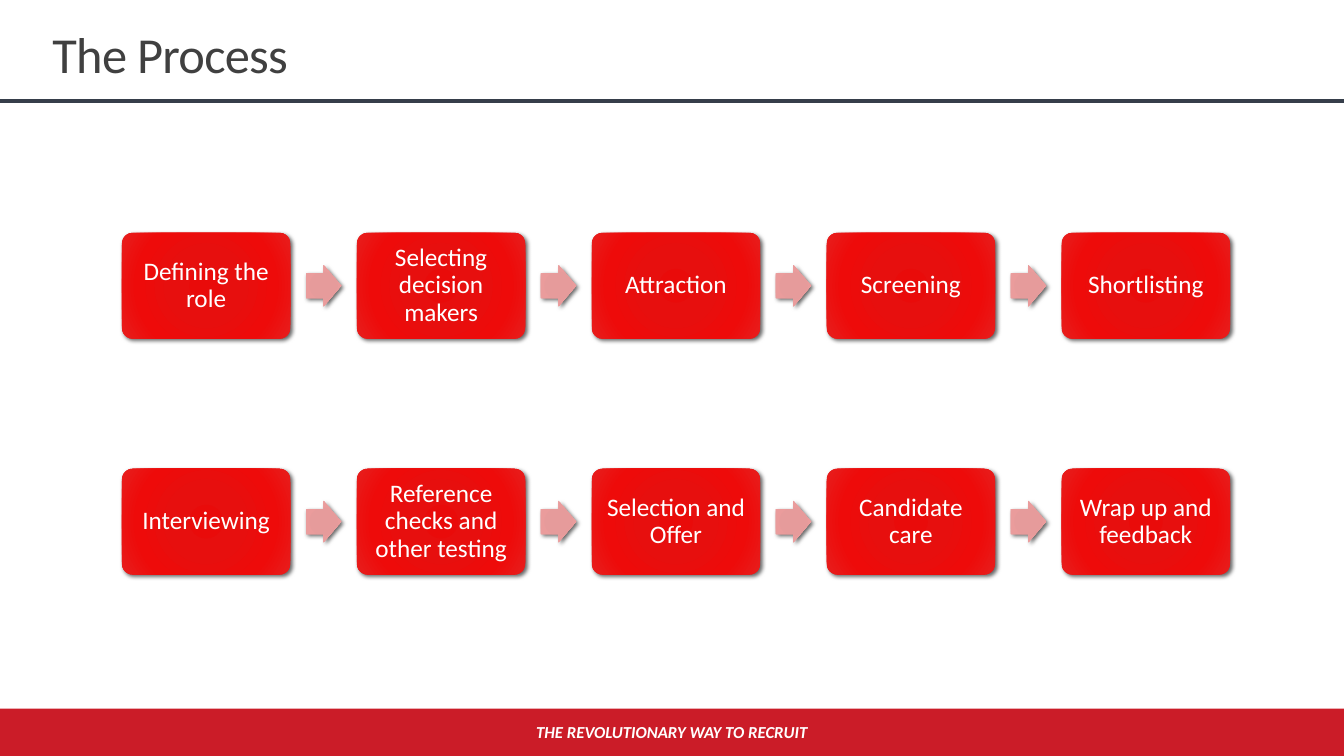
from dataclasses import dataclass

from lxml import etree
from pptx import Presentation
from pptx.dml.color import RGBColor
from pptx.enum.shapes import MSO_CONNECTOR, MSO_SHAPE
from pptx.enum.text import MSO_ANCHOR, PP_ALIGN
from pptx.oxml import parse_xml
from pptx.oxml.ns import nsdecls, qn
from pptx.util import Inches, Pt

RECT, ROUNDED, ARROW = MSO_SHAPE.RECTANGLE, MSO_SHAPE.ROUNDED_RECTANGLE, MSO_SHAPE.RIGHT_ARROW
STRAIGHT = MSO_CONNECTOR.STRAIGHT
LEFT, CENTER = PP_ALIGN.LEFT, PP_ALIGN.CENTER
MIDDLE, BOTTOM = MSO_ANCHOR.MIDDLE, MSO_ANCHOR.BOTTOM

W, H = 13.33, 7.5


@dataclass(frozen=True)
class Theme:
    font: str = "Calibri"
    title_size: int = 36
    step_size: int = 18
    footer_size: int = 12
    title: str = "404040"
    rule: str = "363E4A"
    footer: str = "CB1C28"
    white: str = "FFFFFF"
    stops: tuple = (0, 34, 70, 100)
    step: tuple = ("E90B0A", "E70F0E", "EE0B0A", "E71E1D")
    arrow: tuple = ("E59898", "E69B9B", "EA9C9C", "EFAAA9")


T = Theme()
ROWS = [
    ["Defining the role", "Selecting decision makers", "Attraction",
     "Screening", "Shortlisting"],
    ["Interviewing", "Reference checks and other testing",
     "Selection and Offer", "Candidate care", "Wrap up and feedback"],
]

# Process grid
GRID_X, GRID_Y = 1.21, 2.31
PITCH_X, PITCH_Y = 2.33, 2.34
STEP_W, STEP_H = 1.67, 1.05
ARROW_W, ARROW_H = 0.35, 0.41


def write(s, text, size, color, align=CENTER, anchor=MIDDLE, spacing=1.0,
          bold=False, italic=False, tracking=None):
    tf = s.text_frame
    tf.word_wrap = True
    tf.vertical_anchor = anchor
    p = tf.paragraphs[0]
    p.alignment, p.line_spacing = align, spacing
    r = p.add_run()
    r.text = text
    r.font.name, r.font.size = T.font, Pt(size)
    r.font.bold, r.font.italic = bold, italic
    r.font.color.rgb = RGBColor.from_string(color)
    if tracking is not None:
        r.font._element.set("spc", str(int(tracking * 100)))
    return tf


def add_shape(shapes, kind, box):
    s = shapes.add_shape(kind, *map(Inches, box))
    s.line.fill.background()
    s.shadow.inherit = False
    return s


def add_glossy(shapes, kind, box, colors, adjustments):
    """Shape with a radial gradient and a soft shadow to the lower right."""
    s = add_shape(shapes, kind, box)
    for i, value in enumerate(adjustments):
        s.adjustments[i] = value
    stops = "".join(f'<a:gs pos="{pos * 1000}"><a:srgbClr val="{color}"/></a:gs>'
                    for pos, color in zip(T.stops, colors))
    s.fill.background()
    spPr = s._element.spPr
    spPr.replace(spPr.find(qn("a:noFill")), parse_xml(
        f'<a:gradFill {nsdecls("a")} rotWithShape="1"><a:gsLst>{stops}</a:gsLst>'
        '<a:path path="circle"><a:fillToRect l="100000" t="100000" r="100000" b="100000"/>'
        '</a:path></a:gradFill>'))
    spPr.find(qn("a:effectLst")).append(parse_xml(
        f'<a:outerShdw {nsdecls("a")} blurRad="{Pt(3)}" dist="{Pt(2)}" dir="2700000" '
        'algn="tl" rotWithShape="0"><a:srgbClr val="000000"><a:alpha val="60000"/>'
        '</a:srgbClr></a:outerShdw>'))
    return s


def add_header(slide, text, box):
    # Title
    s = slide.shapes.title
    s.left, s.top, s.width, s.height = map(Inches, box)
    write(s, text, T.title_size, T.title, align=LEFT, anchor=BOTTOM,
          spacing=0.85, tracking=-0.5)
    # Rule across the slide
    rule = slide.shapes.add_connector(STRAIGHT, 0, Inches(1), Inches(W), Inches(1))
    rule.line.color.rgb = RGBColor.from_string(T.rule)
    rule.line.width = Pt(3)
    etree.SubElement(rule._element.spPr, qn("a:effectLst"))


def add_footer(slide, text, box):
    s = add_shape(slide.shapes, RECT, box)
    s.fill.solid()
    s.fill.fore_color.rgb = RGBColor.from_string(T.footer)
    write(s, text, T.footer_size, T.white, bold=True, italic=True)


def add_process_row(slide, steps, left, top):
    shapes = slide.shapes.add_group_shape().shapes
    gap = PITCH_X - STEP_W
    for i, step in enumerate(steps):
        x = left + i * PITCH_X
        # Arrow from the previous step
        if i:
            add_glossy(shapes, ARROW,
                       (x - gap / 2 - ARROW_W / 2, top + (STEP_H - ARROW_H) / 2,
                        ARROW_W, ARROW_H), T.arrow, (0.6, 0.5))
        # Step
        s = add_glossy(shapes, ROUNDED, (x, top, STEP_W, STEP_H), T.step, (0.1,))
        tf = write(s, step, T.step_size, T.white, spacing=0.9)
        tf.margin_left = tf.margin_right = tf.margin_top = tf.margin_bottom = Inches(0.1)


def main():
    prs = Presentation()
    prs.slide_width, prs.slide_height = Inches(W), Inches(H)
    slide = prs.slides.add_slide(prs.slide_layouts[5])
    add_footer(slide, "THE REVOLUTIONARY WAY TO RECRUIT", (0, 7.03, W, H - 7.03))
    add_header(slide, "The Process", (0.42, 0.19, 11.78, 0.69))
    for i, steps in enumerate(ROWS):
        add_process_row(slide, steps, GRID_X, GRID_Y + i * PITCH_Y)
    prs.save("out.pptx")


if __name__ == "__main__":
    main()
